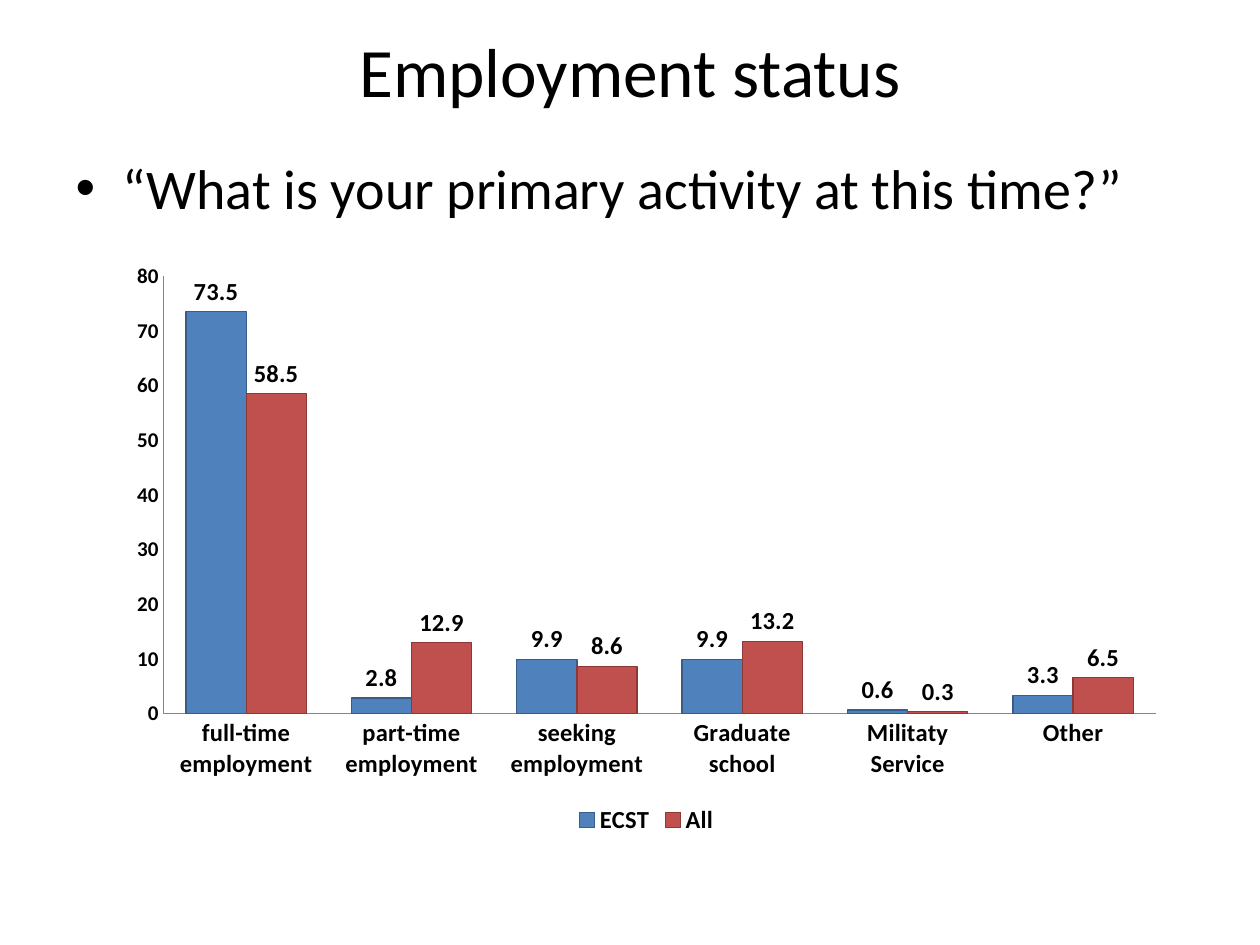
"""Build the employment status slide with its clustered column chart."""
from dataclasses import dataclass

from pptx import Presentation
from pptx import util as u
from pptx.chart.data import CategoryChartData
from pptx.dml.color import RGBColor
from pptx.enum import chart as ch
from pptx.enum import text

FONT = "Calibri"
INK = "000000"
AXIS = "868686"
SCALE = 914400 / 126


@dataclass
class Box:
    x: int
    y: int
    w: int
    h: int

    def emu(self) -> list[u.Emu]:
        return [px(n) for n in (self.x, self.y, self.w, self.h)]


@dataclass
class Group:
    name: str
    fill: str
    edge: str
    vals: tuple[float, ...]


CATS = ("full-time employment", "part-time employment", "seeking employment",
        "Graduate school", "Militaty Service", "Other")
GROUPS = (
    Group("ECST", "4F81BD", "385D8A", (73.5, 2.8, 9.9, 9.9, 0.6, 3.3)),
    Group("All", "C0504D", "8C3836", (58.5, 12.9, 8.6, 13.2, 0.3, 6.5)),
)


def px(n: int) -> u.Emu:
    return u.Emu(round(n * SCALE))


def rgb(code: str) -> RGBColor:
    return RGBColor.from_string(code)


def style(font, size: float, bold: bool = False) -> None:
    font.name, font.size, font.bold = FONT, u.Pt(size), bold
    font.color.rgb = rgb(INK)


def write(shape, box: Box, words: str, *, size: float, align, anchor) -> None:
    shape.left, shape.top, shape.width, shape.height = box.emu()
    frame = shape.text_frame
    frame.text = words
    frame.word_wrap = True
    frame.vertical_anchor = anchor
    para = frame.paragraphs[0]
    para.alignment = align
    para.space_before = u.Pt(0)
    style(para.runs[0].font, size)


def trim(axis, size: float) -> None:
    axis.has_major_gridlines = False
    axis.major_tick_mark = axis.minor_tick_mark = ch.XL_TICK_MARK.NONE
    axis.format.line.color.rgb = rgb(AXIS)
    axis.format.line.width = u.Pt(0.75)
    style(axis.tick_labels.font, size, True)


def paint(bars, group: Group) -> None:
    bars.format.fill.solid()
    bars.format.fill.fore_color.rgb = rgb(group.fill)
    bars.format.line.color.rgb = rgb(group.edge)
    bars.format.line.width = u.Pt(0.75)
    bars.invert_if_negative = False
    tags = bars.data_labels
    tags.show_value = True
    tags.position = ch.XL_LABEL_POSITION.OUTSIDE_END
    style(tags.font, 14, True)


def plot(slide, box: Box) -> None:
    data = CategoryChartData()
    data.categories = CATS
    for group in GROUPS:
        data.add_series(group.name, group.vals)
    kind = ch.XL_CHART_TYPE.COLUMN_CLUSTERED
    chart = slide.shapes.add_chart(kind, *box.emu(), data).chart
    style(chart.font, 10)
    chart.has_title = False
    chart.has_legend = True
    chart.legend.position = ch.XL_LEGEND_POSITION.BOTTOM
    chart.legend.include_in_layout = False
    style(chart.legend.font, 14, True)
    trim(chart.category_axis, 14)
    trim(chart.value_axis, 12)
    chart.value_axis.minimum_scale = 0
    chart.value_axis.maximum_scale = 80
    chart.value_axis.major_unit = 10
    bars = chart.plots[0]
    bars.gap_width, bars.overlap = 75, 0
    bars.vary_by_categories = False
    for item, group in zip(bars.series, GROUPS):
        paint(item, group)


def main() -> None:
    deck = Presentation()
    deck.slide_width, deck.slide_height = px(1260), px(945)
    slide = deck.slides.add_slide(deck.slide_layouts[1])
    write(slide.shapes.title, Box(63, 21, 1134, 98), "Employment status",
          size=39.6, align=text.PP_ALIGN.CENTER, anchor=text.MSO_ANCHOR.MIDDLE)
    write(slide.placeholders[1], Box(63, 147, 1134, 735),
          "“What is your primary activity at this time?”",
          size=32, align=text.PP_ALIGN.LEFT, anchor=text.MSO_ANCHOR.TOP)
    plot(slide, Box(116, 252, 1061, 588))
    deck.save("out.pptx")


if __name__ == "__main__":
    main()
